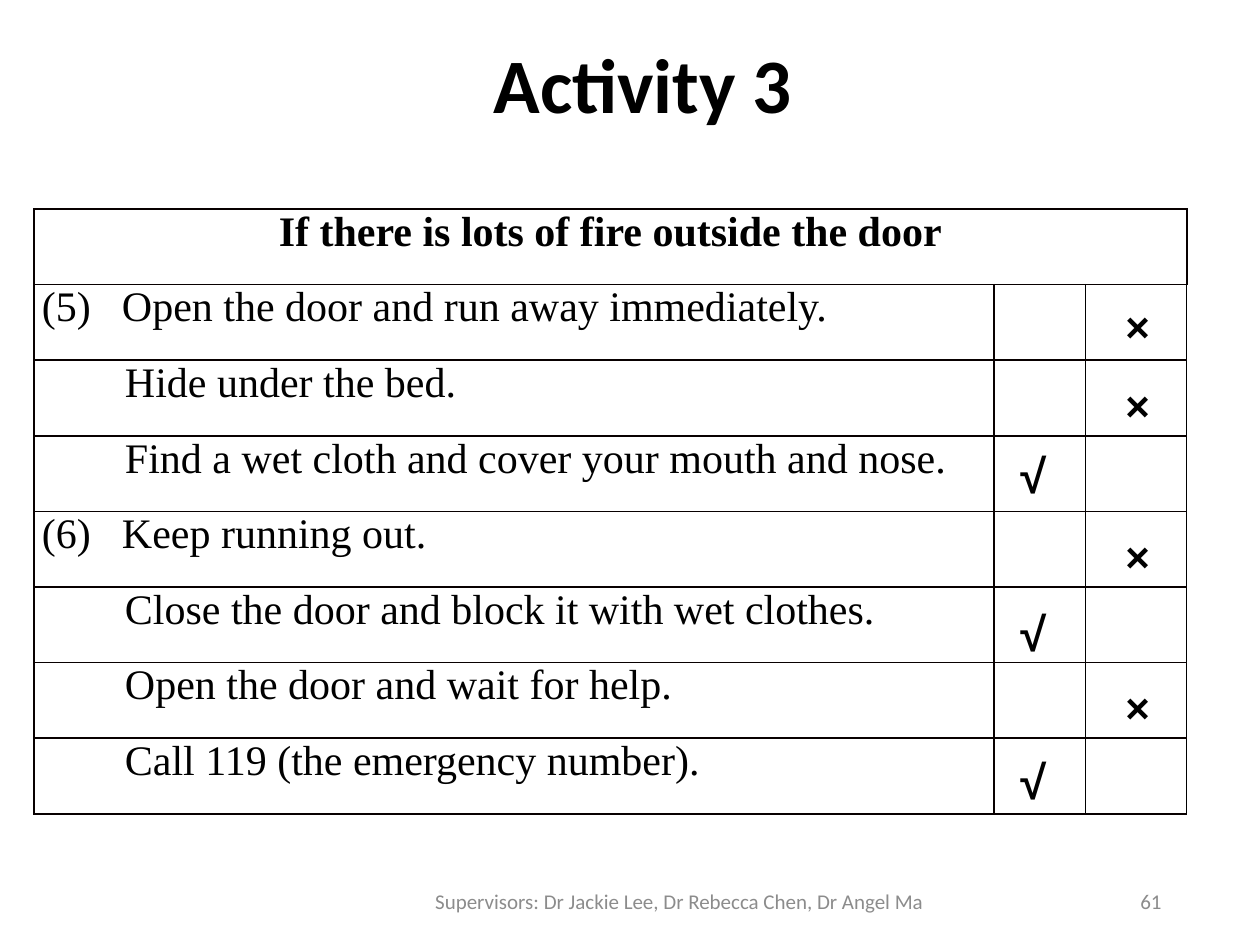
from dataclasses import dataclass

from lxml.etree import SubElement
from pptx import Presentation
from pptx.dml.color import RGBColor
from pptx.enum.text import MSO_ANCHOR, PP_ALIGN
from pptx.oxml.ns import qn
from pptx.util import Pt

EMU_PER_PX = 914400 / 126


@dataclass(frozen=True)
class Theme:
    ink: str = "000000"
    rule: str = "080000"
    muted: str = "8C8C8C"
    heading_font: str = "Calibri"
    table_font: str = "Times New Roman"
    mark_font: str = "Arial"
    title_size: int = 44
    table_size: int = 24
    footer_size: int = 12
    rule_width: float = 1
    divider_width: float = 0.75


THEME = Theme()

TITLE = "Activity 3"
SUPERVISORS = "Supervisors: Dr Jackie Lee, Dr Rebecca Chen, Dr Angel Ma"
PAGE_NUMBER = "61"
QUESTION = "If there is lots of fire outside the door"
# number, action, mark, px from the top of the row to the mark's box
ACTIONS = [
    ("(5)", "Open the door and run away immediately.", "×", 10),
    ("", "Hide under the bed.", "×", 13),
    ("", "Find a wet cloth and cover your mouth and nose.", "√", 4),
    ("(6)", "Keep running out.", "×", 13),
    ("", "Close the door and block it with wet clothes.", "√", 11),
    ("", "Open the door and wait for help.", "×", 13),
    ("", "Call 119 (the emergency number).", "√", 8),
]
# left, width, height, type size, wrap
MARKS = {"√": (1008, 67, 71, 27, True), "×": (1113, 68, 63, 24, False)}

TABLE_LEFT, TABLE_TOP, TABLE_HEIGHT = 34, 209, 605
COLUMNS = (960, 92, 101)
ROW_COUNT = len(ACTIONS) + 1
ROW_HEIGHT = TABLE_HEIGHT / ROW_COUNT
NUMBERED_INDENT, PLAIN_INDENT = 80, 83


def px(length):
    return round(length * EMU_PER_PX)


def add_run(paragraph, text, font, size, color=THEME.ink, bold=False):
    run = paragraph.add_run()
    run.text = text
    run.font.name = font
    run.font.size = Pt(size)
    run.font.bold = bold
    run.font.color.rgb = RGBColor.from_string(color)


def add_text(slide, box, text, font, size, color=THEME.ink, bold=False,
             align=PP_ALIGN.LEFT, anchor=MSO_ANCHOR.TOP, wrap=True):
    frame = slide.shapes.add_textbox(*map(px, box)).text_frame
    frame.word_wrap = wrap
    frame.vertical_anchor = anchor
    paragraph = frame.paragraphs[0]
    paragraph.alignment = align
    add_run(paragraph, text, font, size, color, bold)


def style_cell(cell, column):
    """Draw thin dividers beside the mark columns and rules elsewhere."""
    rule = (THEME.rule, THEME.rule_width)
    divider = (THEME.ink, THEME.divider_width)
    borders = {
        "a:lnL": divider if column == 2 else rule,
        "a:lnR": divider if column > 0 else rule,
        "a:lnT": rule,
        "a:lnB": rule,
    }
    properties = cell._tc.get_or_add_tcPr()
    for tag, (color, width) in borders.items():
        line = SubElement(properties, qn(tag), w=str(Pt(width)))
        fill = SubElement(line, qn("a:solidFill"))
        SubElement(fill, qn("a:srgbClr"), val=color)
    cell.fill.background()
    cell.margin_left = cell.margin_right = px(8)
    cell.margin_top = 0
    cell.margin_bottom = px(10)


def fill_action(cell, number, action):
    paragraph = cell.text_frame.paragraphs[0]
    indent = px(NUMBERED_INDENT if number else PLAIN_INDENT)
    properties = paragraph._p.get_or_add_pPr()
    properties.set("marL", str(indent))
    properties.set("indent", str(-indent if number else 0))
    text = f"{number}\t{action}" if number else action
    add_run(paragraph, text, THEME.table_font, THEME.table_size)


def add_action_table(slide):
    table = slide.shapes.add_table(
        ROW_COUNT, len(COLUMNS), px(TABLE_LEFT), px(TABLE_TOP),
        px(sum(COLUMNS)), px(TABLE_HEIGHT)).table
    table.first_row = table.horz_banding = False
    for column, width in zip(table.columns, COLUMNS):
        column.width = px(width)
    for row in table.rows:
        row.height = px(ROW_HEIGHT)
        for index, cell in enumerate(row.cells):
            style_cell(cell, index)

    header = table.cell(0, 0)
    header.merge(table.cell(0, len(COLUMNS) - 1))
    question = header.text_frame.paragraphs[0]
    question.alignment = PP_ALIGN.CENTER
    add_run(question, QUESTION, THEME.table_font, THEME.table_size, bold=True)
    for row, (number, action, _, _) in enumerate(ACTIONS, start=1):
        fill_action(table.cell(row, 0), number, action)


def add_marks(slide):
    for row, (_, _, mark, drop) in enumerate(ACTIONS, start=1):
        left, width, height, size, wrap = MARKS[mark]
        top = TABLE_TOP + row * ROW_HEIGHT + drop
        add_text(slide, (left, top, width, height), mark,
                 THEME.mark_font, size, bold=True, wrap=wrap)


def main():
    deck = Presentation()
    deck.slide_width, deck.slide_height = px(1260), px(945)
    slide = deck.slides.add_slide(deck.slide_layouts[6])

    add_text(slide, (49, 36, 1188, 94), TITLE, THEME.heading_font,
             THEME.title_size, bold=True, align=PP_ALIGN.CENTER,
             anchor=MSO_ANCHOR.MIDDLE)
    add_action_table(slide)
    add_marks(slide)
    for box, text, align in (
        ((417, 876, 525, 50), SUPERVISORS, PP_ALIGN.CENTER),
        ((890, 876, 284, 50), PAGE_NUMBER, PP_ALIGN.RIGHT),
    ):
        add_text(slide, box, text, THEME.heading_font, THEME.footer_size,
                 THEME.muted, align=align, anchor=MSO_ANCHOR.MIDDLE)
    deck.save("out.pptx")


if __name__ == "__main__":
    main()
